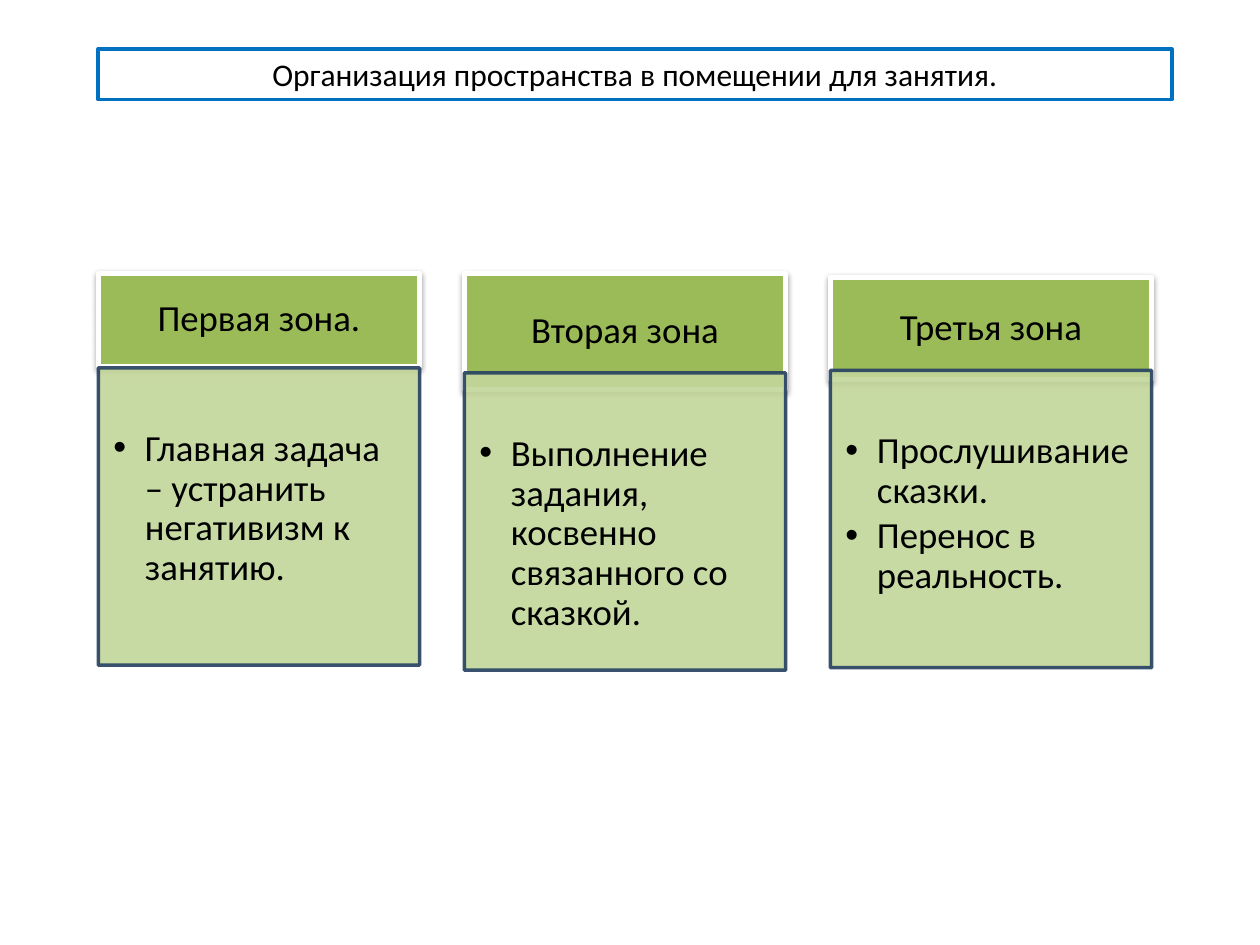
from lxml import etree
from pptx import Presentation
from pptx.dml.color import RGBColor
from pptx.enum import shapes, text
from pptx.oxml.ns import qn
from pptx.util import Inches, Pt

BLACK = RGBColor(0x00, 0x00, 0x00)
WHITE = RGBColor(0xFF, 0xFF, 0xFF)
BLUE = RGBColor(0x00, 0x70, 0xC0)
NAVY = RGBColor(0x25, 0x40, 0x61)
GREEN = RGBColor(0x9B, 0xBB, 0x59)
PALE_GREEN = RGBColor(0xC3, 0xD6, 0x9B)
FONT = "Calibri"

ZONE_LEFT, ZONE_STEP, ZONE_WIDTH, TASKS_HEIGHT = 0.78, 2.905, 2.55, 2.36
# heading, heading top, heading height, tasks top, tasks
ZONES = [
    ("Первая зона.", 2.17, 0.74, 2.92,
     ["Главная задача – устранить негативизм к занятию."]),
    ("Вторая зона", 2.17, 0.92, 2.96,
     ["Выполнение задания, косвенно связанного со сказкой."]),
    ("Третья зона", 2.2, 0.81, 2.94,
     ["Прослушивание сказки.", "Перенос в реальность."]),
]


def style_paragraph(paragraph, size, align):
    paragraph.alignment = align
    paragraph.font.name = FONT
    paragraph.font.size = Pt(size)
    paragraph.font.color.rgb = BLACK


def set_margins(frame, left, top, right, bottom):
    frame.margin_left, frame.margin_top = Inches(left), Inches(top)
    frame.margin_right, frame.margin_bottom = Inches(right), Inches(bottom)


def set_alpha(color_parent, percent):
    for color in color_parent.iter(qn("a:srgbClr")):
        etree.SubElement(color, qn("a:alpha"), val=str(percent * 1000))


def add_soft_shadow(shape):
    effects = shape._element.spPr.find(qn("a:effectLst"))
    shadow = etree.SubElement(effects, qn("a:outerShdw"), blurRad="40000",
                              dist="20000", dir="5400000", rotWithShape="0")
    etree.SubElement(shadow, qn("a:srgbClr"), val=str(BLACK))
    set_alpha(shadow, 38)


def add_bullet(paragraph):
    properties = paragraph._p.get_or_add_pPr()
    properties.set("marL", str(Inches(0.25)))
    properties.set("indent", str(Inches(-0.25)))
    etree.SubElement(properties, qn("a:buFont"), typeface="Arial")
    etree.SubElement(properties, qn("a:buChar"), char="•")


def add_box(slide, left, top, width, height, fill, line, line_width):
    box = slide.shapes.add_shape(
        shapes.MSO_SHAPE.RECTANGLE,
        Inches(left), Inches(top), Inches(width), Inches(height))
    box.shadow.inherit = False
    box.fill.solid()
    box.fill.fore_color.rgb = fill
    box.line.color.rgb = line
    box.line.width = Pt(line_width)
    box.text_frame.word_wrap = True
    return box


def place_title(slide, wording, left, top, width, height):
    title = slide.shapes.title
    title.left, title.top = Inches(left), Inches(top)
    title.width, title.height = Inches(width), Inches(height)
    title.line.color.rgb = BLUE
    title.line.width = Pt(2.25)
    title.text_frame.text = wording
    title.text_frame.auto_size = text.MSO_AUTO_SIZE.NONE
    style_paragraph(title.text_frame.paragraphs[0], 18, text.PP_ALIGN.CENTER)


def add_heading(slide, wording, left, top, width, height):
    heading = add_box(slide, left, top, width, height, GREEN, WHITE, 3)
    add_soft_shadow(heading)
    frame = heading.text_frame
    set_margins(frame, 0.16, 0.09, 0.16, 0.09)
    frame.vertical_anchor = text.MSO_ANCHOR.MIDDLE
    frame.text = wording
    frame.paragraphs[0].line_spacing = 0.9
    style_paragraph(frame.paragraphs[0], 21, text.PP_ALIGN.CENTER)


def add_tasks(slide, tasks, left, top, width, height):
    box = add_box(slide, left, top, width, height, PALE_GREEN, NAVY, 2)
    set_alpha(box._element.spPr, 90)
    frame = box.text_frame
    set_margins(frame, 0.12, 0.49, 0.16, 0.18)
    frame.vertical_anchor = text.MSO_ANCHOR.TOP
    frame.text = "\n".join(tasks)
    for paragraph in frame.paragraphs:
        paragraph.line_spacing = 0.9
        paragraph.space_after = Pt(3)
        add_bullet(paragraph)
        style_paragraph(paragraph, 21, text.PP_ALIGN.LEFT)


def main():
    prs = Presentation()
    prs.slide_width, prs.slide_height = Inches(10), Inches(7.5)
    slide = prs.slides.add_slide(prs.slide_layouts.get_by_name("Title Only"))
    place_title(slide, "Организация пространства в помещении для занятия.",
                0.78, 0.39, 8.52, 0.4)
    for i, (heading, top, height, tasks_top, tasks) in enumerate(ZONES):
        left = ZONE_LEFT + i * ZONE_STEP
        add_heading(slide, heading, left, top, ZONE_WIDTH, height)
        add_tasks(slide, tasks, left, tasks_top, ZONE_WIDTH, TASKS_HEIGHT)
    prs.save("out.pptx")


if __name__ == "__main__":
    main()
